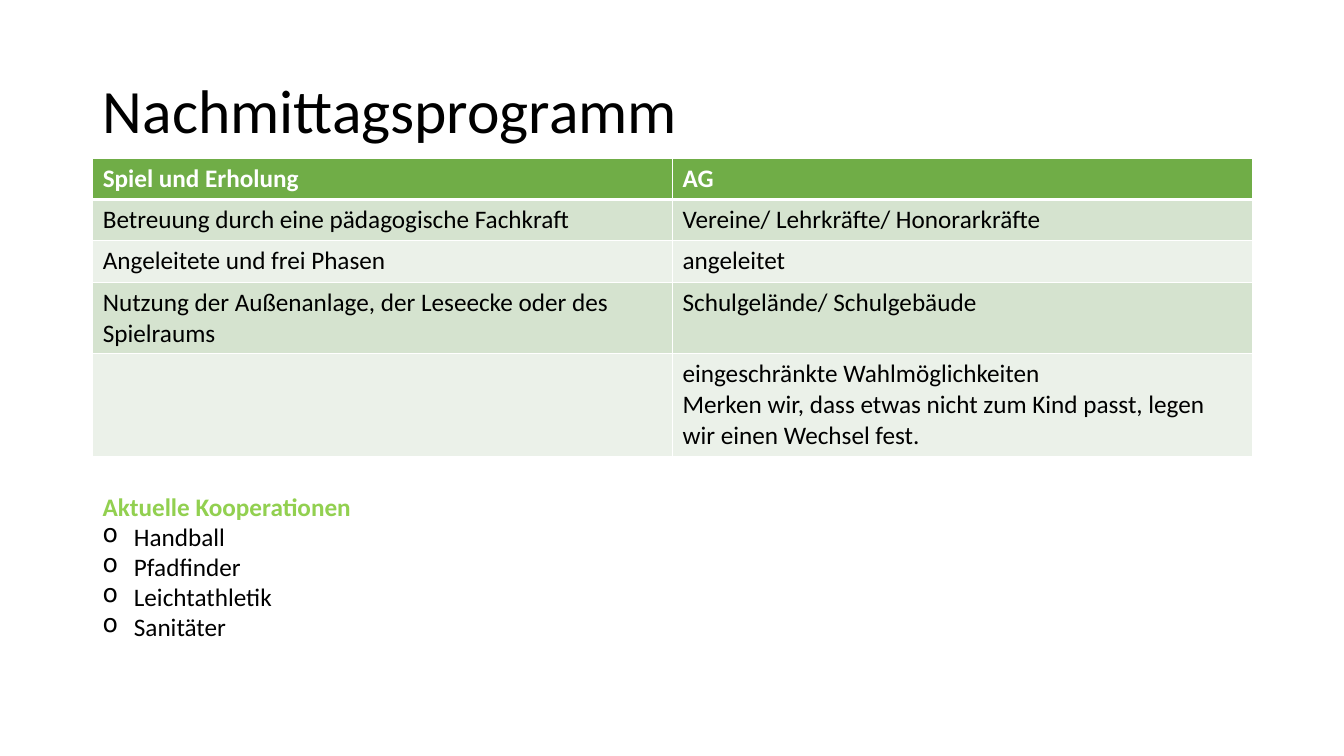
from lxml import etree
from pptx import Presentation
from pptx.dml.color import RGBColor
from pptx.enum.text import MSO_ANCHOR, MSO_AUTO_SIZE, PP_ALIGN
from pptx.oxml.ns import qn
from pptx.util import Inches, Pt

LEFT = PP_ALIGN.LEFT
MIDDLE = MSO_ANCHOR.MIDDLE
NO_FIT = MSO_AUTO_SIZE.NONE
GROW = MSO_AUTO_SIZE.SHAPE_TO_FIT_TEXT

FONT = "Calibri"
COLORS = {
    "text": "000000",
    "white": "FFFFFF",
    "header": "70AD47",
    "odd": "D5E3CF",
    "even": "EBF1E9",
    "accent": "92D050",
}
MARGIN = 0.92
CONTENT_WIDTH = 11.5
ROW_HEIGHTS = [0.41, 0.41, 0.41, 0.7, 1.02]
PROGRAMME = [
    ("Spiel und Erholung", "AG"),
    ("Betreuung durch eine pädagogische Fachkraft", "Vereine/ Lehrkräfte/ Honorarkräfte"),
    ("Angeleitete und frei Phasen", "angeleitet"),
    ("Nutzung der Außenanlage, der Leseecke oder des Spielraums", "Schulgelände/ Schulgebäude"),
    ("", "eingeschränkte Wahlmöglichkeiten\n"
         "Merken wir, dass etwas nicht zum Kind passt, legen wir einen Wechsel fest."),
]
PARTNERS = ["Handball", "Pfadfinder", "Leichtathletik", "Sanitäter"]


class SlideBuilder:
    """Adds consistently styled elements to one title-only slide."""

    def __init__(self, presentation):
        self.slide = presentation.slides.add_slide(presentation.slide_layouts[5])

    def add_text(self, paragraph, text, size=18, color="text", bold=False):
        run = paragraph.add_run()
        run.text = text
        run.font.name = FONT
        run.font.size = Pt(size)
        run.font.bold = bold
        run.font.color.rgb = RGBColor.from_string(COLORS[color])

    def title(self, text, top, height):
        shape = self.slide.shapes.title
        shape.left, shape.top = Inches(MARGIN), Inches(top)
        shape.width, shape.height = Inches(CONTENT_WIDTH), Inches(height)
        frame = shape.text_frame
        frame.word_wrap = True
        frame.auto_size = NO_FIT
        frame.vertical_anchor = MIDDLE
        paragraph = frame.paragraphs[0]
        paragraph.alignment = LEFT
        paragraph.line_spacing = 0.9
        self.add_text(paragraph, text, 44)

    def border(self, cell, side, width):
        properties = cell._tc.get_or_add_tcPr()
        line = etree.SubElement(properties, qn("a:ln" + side), w=str(Pt(width)))
        fill = etree.SubElement(line, qn("a:solidFill"))
        etree.SubElement(fill, qn("a:srgbClr"), val=COLORS["white"])

    def cell(self, cell, text, row):
        header = row == 0
        widths = {"L": 1, "R": 1, "T": 3 if row == 1 else 1, "B": 3 if header else 1}
        for side, width in widths.items():
            self.border(cell, side, width)
        fill = "header" if header else "odd" if row % 2 else "even"
        cell.fill.solid()
        cell.fill.fore_color.rgb = RGBColor.from_string(COLORS[fill])
        frame = cell.text_frame
        for index, line in enumerate(text.splitlines()):
            paragraph = frame.add_paragraph() if index else frame.paragraphs[0]
            self.add_text(paragraph, line, color="white" if header else "text", bold=header)

    def table(self, rows, top, heights):
        columns = len(rows[0])
        table = self.slide.shapes.add_table(
            len(rows), columns, Inches(MARGIN), Inches(top),
            Inches(CONTENT_WIDTH), Inches(sum(heights))).table
        for column in table.columns:
            column.width = Inches(CONTENT_WIDTH / columns)
        for row, (texts, height) in enumerate(zip(rows, heights)):
            table.rows[row].height = Inches(height)
            for column, text in enumerate(texts):
                self.cell(table.cell(row, column), text, row)

    def bullet_list(self, heading, items, top, height):
        shape = self.slide.shapes.add_textbox(
            Inches(MARGIN), Inches(top), Inches(CONTENT_WIDTH), Inches(height))
        frame = shape.text_frame
        frame.word_wrap = True
        frame.auto_size = GROW
        self.add_text(frame.paragraphs[0], heading, color="accent", bold=True)
        for item in items:
            paragraph = frame.add_paragraph()
            properties = paragraph._p.get_or_add_pPr()
            properties.set("marL", str(Inches(0.31)))
            properties.set("indent", str(Inches(-0.31)))
            etree.SubElement(properties, qn("a:buChar"), char="o")
            self.add_text(paragraph, item)


def main():
    presentation = Presentation()
    presentation.slide_width = Inches(13.33)
    presentation.slide_height = Inches(7.5)
    builder = SlideBuilder(presentation)
    builder.title("Nachmittagsprogramm", 0.4, 1.45)
    builder.table(PROGRAMME, 1.57, ROW_HEIGHTS)
    builder.bullet_list("Aktuelle Kooperationen", PARTNERS, 4.82, 1.62)
    presentation.save("out.pptx")


if __name__ == "__main__":
    main()
